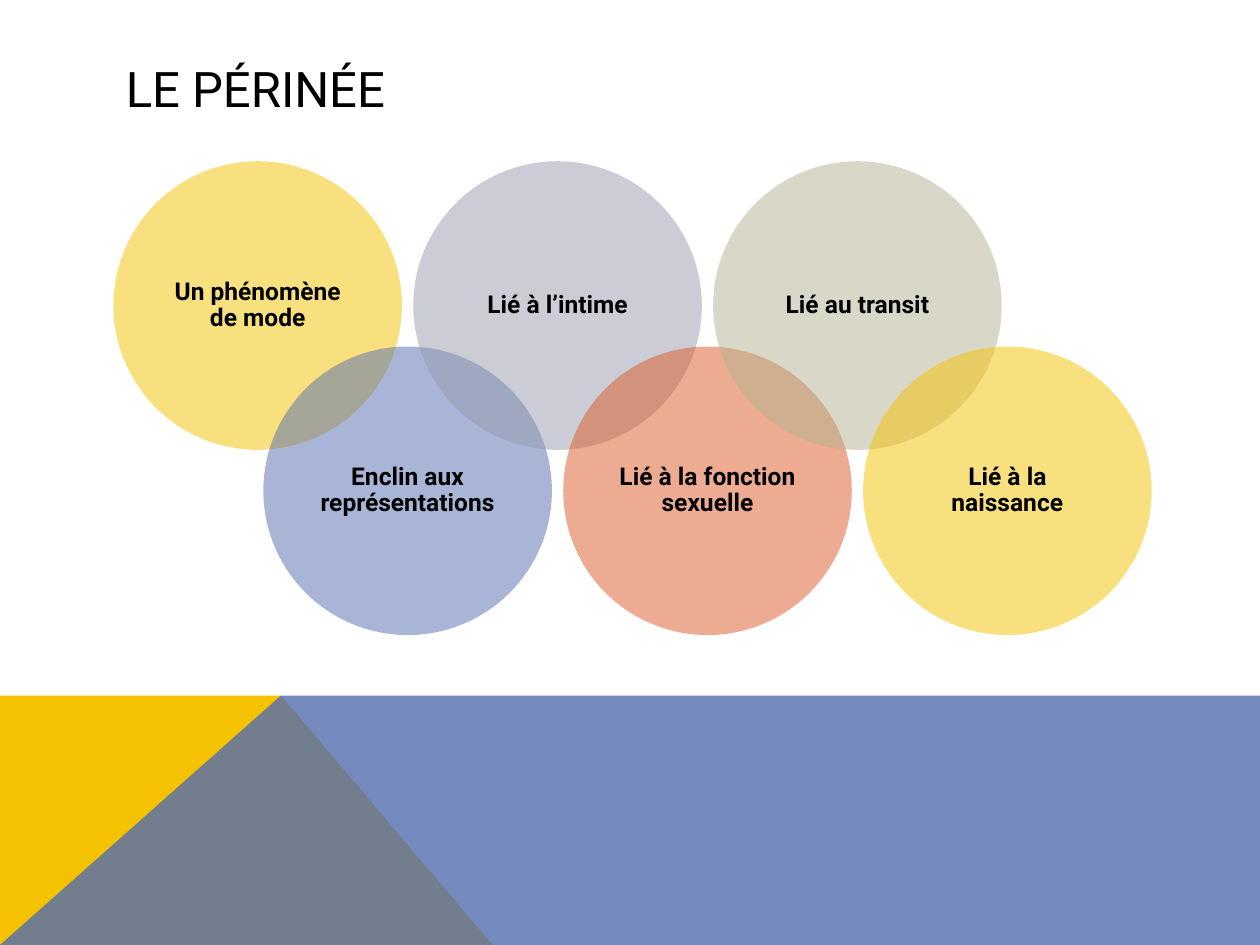
import pptx
import pptx.util
import pptx.dml.color
import pptx.enum.shapes
import pptx.enum.text
import pptx.oxml.ns
import lxml.etree

Inches = pptx.util.Inches
Anchor = pptx.enum.text.MSO_ANCHOR
Align = pptx.enum.text.PP_ALIGN

hues = {
    "gold": "F5C201",
    "blue": "526DB0",
    "gray": "989AAC",
    "rust": "DC5924",
    "sage": "B4B392",
    "ink": "000000",
}


def paint(shape, hue, alpha=100):
    """Fill a shape with a flat colour, alpha in percent, without line or shadow."""
    shape.shadow.inherit = False
    shape.line.fill.background()
    shape.fill.solid()
    shape.fill.fore_color.rgb = pptx.dml.color.RGBColor.from_string(hues[hue])
    if alpha < 100:
        tag = pptx.oxml.ns.qn("a:srgbClr")
        color = next(shape.fill._xPr.iter(tag))
        lxml.etree.SubElement(color, pptx.oxml.ns.qn("a:alpha"), val=str(alpha * 1000))


def write(box, text, size, bold=False):
    """Put one middle-anchored paragraph into a text box and return it."""
    frame = box.text_frame
    frame.word_wrap = True
    frame.vertical_anchor = Anchor.MIDDLE
    frame.text = text
    line = frame.paragraphs[0]
    font = line.runs[0].font
    font.name = "Roboto"
    font.size = pptx.util.Pt(size)
    font.bold = bold
    font.color.rgb = pptx.dml.color.RGBColor.from_string(hues["ink"])
    return line


deck = pptx.Presentation()
deck.slide_width = Inches(10)
deck.slide_height = Inches(7.5)
slide = deck.slides.add_slide(deck.slide_layouts[6])
shapes = slide.shapes

# Footer band: a gold wedge under a translucent blue sheet
top, base, peak = 5.52, 7.5, 2.23
bands = [
    ("gold", 100, [(0, base), (0, top), (peak, top), (3.91, base)]),
    ("blue", 80, [(0, base), (peak, top), (10, top), (10, base)]),
]
for hue, alpha, points in bands:
    spots = [(Inches(x), Inches(y)) for x, y in points]
    pen = shapes.build_freeform(*spots[0], scale=1.0)
    pen.add_line_segments(spots[1:], close=True)
    paint(pen.convert_to_shape(), hue, alpha)

title = shapes.add_textbox(Inches(0.9), Inches(0.4), Inches(8.22), Inches(0.6))
write(title, "LE PÉRINÉE", 28)

# Overlapping circles, alternating between two rows
items = [
    ("Un phénomène de mode", "gold"),
    ("Enclin aux représentations", "blue"),
    ("Lié à l’intime", "gray"),
    ("Lié à la fonction sexuelle", "rust"),
    ("Lié au transit", "sage"),
    ("Lié à la naissance", "gold"),
]
left, step, rows = 0.9, 1.19, (1.28, 2.75)
size, inner = Inches(2.29), Inches(1.62)
inset = (size - inner) // 2
for i, (text, hue) in enumerate(items):
    x, y = Inches(left + i * step), Inches(rows[i % 2])
    disc = shapes.add_shape(pptx.enum.shapes.MSO_SHAPE.OVAL, x, y, size, size)
    paint(disc, hue, 50)
    label = shapes.add_textbox(x + inset, y + inset, inner, inner)
    line = write(label, text, 14, bold=True)
    line.alignment = Align.CENTER
    line.line_spacing = 0.9
    for side in ("left", "right", "top", "bottom"):
        setattr(label.text_frame, "margin_" + side, Inches(0.06))

deck.save("out.pptx")
